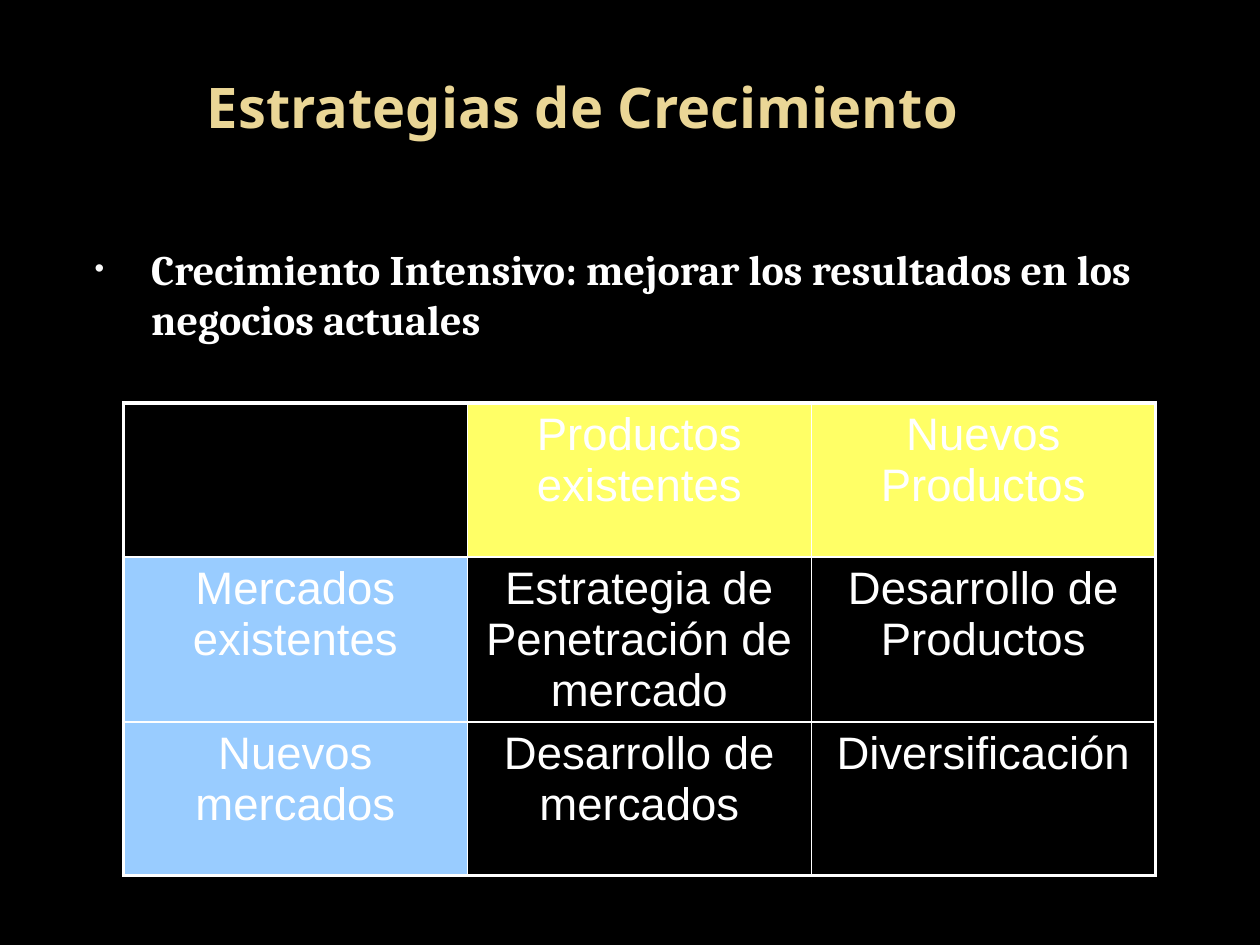
from lxml import etree
from pptx import Presentation
from pptx.dml.color import RGBColor
from pptx.enum.text import MSO_ANCHOR, MSO_AUTO_SIZE, PP_ALIGN
from pptx.oxml.ns import qn
from pptx.util import Inches, Pt

CENTER = PP_ALIGN.CENTER
MIDDLE = MSO_ANCHOR.MIDDLE
FIXED = MSO_AUTO_SIZE.NONE

BLACK, WHITE, GOLD = "000000", "FFFFFF", "EAD696"
YELLOW, BLUE, PALE = "FFFF66", "99CCFF", "F9F9F9"
THIN, THICK = 1, 2.25

GRID = [
    ["", "Productos existentes", "Nuevos Productos"],
    ["Mercados existentes", "Estrategia de Penetración de mercado",
     "Desarrollo de Productos"],
    ["Nuevos mercados", "Desarrollo de mercados", "Diversificación"],
]


def color(code):
    return RGBColor.from_string(code)


def add_tag(parent, tag, **attrs):
    node = etree.SubElement(parent, qn(tag))
    for key, value in attrs.items():
        node.set(key, str(value))
    return node


class Deck:
    """Holds the text style and the current slide."""

    def __init__(self, slide):
        self.slide = slide
        self.fonts = {"title": ("Noto Sans", 32, GOLD, True),
                      "body": ("Cambria", 24, WHITE, True),
                      "cell": ("Arial", 26, WHITE, False)}
        fill = slide.background.fill
        fill.solid()
        fill.fore_color.rgb = color(BLACK)

    def add_text(self, para, text, style):
        run = para.add_run()
        run.text = text
        font = run.font
        font.name, size, code, font.bold = self.fonts[style]
        font.size = Pt(size)
        font.color.rgb = color(code)

    def place(self, shape, left, top, width, height):
        shape.left, shape.top = Inches(left), Inches(top)
        shape.width, shape.height = Inches(width), Inches(height)
        shape.text_frame.auto_size = FIXED
        return shape.text_frame

    def title(self, text, *box):
        frame = self.place(self.slide.shapes.title, *box)
        frame.vertical_anchor = MIDDLE
        para = frame.paragraphs[0]
        para.alignment = CENTER
        self.add_text(para, text, "title")

    def bullet(self, text, *box):
        para = self.place(self.slide.placeholders[1], *box).paragraphs[0]
        props = para._p.get_or_add_pPr()
        props.set("marL", str(Inches(0.6)))
        props.set("indent", str(Inches(-0.45)))
        add_tag(add_tag(props, "a:buClr"), "a:srgbClr", val=PALE)
        add_tag(props, "a:buSzPct", val=65000)
        add_tag(props, "a:buChar", char="•")
        self.add_text(para, text, "body")

    def border(self, cell, side, width):
        line = add_tag(cell._tc.get_or_add_tcPr(), "a:ln" + side, w=Pt(width))
        add_tag(add_tag(line, "a:solidFill"), "a:srgbClr", val=WHITE)

    def table(self, grid, left, top, wide, high):
        """Draws a grid with a thick frame; wide and high are per cell."""
        rows, cols = len(grid), len(grid[0])
        table = self.slide.shapes.add_table(
            rows, cols, Inches(left), Inches(top),
            Inches(wide * cols), Inches(high * rows)).table
        table.first_row = table.horz_banding = False
        for col in table.columns:
            col.width = Inches(wide)
        for r, texts in enumerate(grid):
            table.rows[r].height = Inches(high)
            for c, text in enumerate(texts):
                cell = table.cell(r, c)
                outer = {"L": c == 0, "R": c == cols - 1,
                         "T": r == 0, "B": r == rows - 1}
                for side, edge in outer.items():
                    self.border(cell, side, THICK if edge else THIN)
                head = YELLOW if r == 0 else BLUE
                cell.fill.solid()
                cell.fill.fore_color.rgb = color(
                    head if text and 0 in (r, c) else BLACK)
                if text:
                    para = cell.text_frame.paragraphs[0]
                    para.alignment = CENTER
                    self.add_text(para, text, "cell")


def main():
    prs = Presentation()
    prs.slide_width, prs.slide_height = Inches(10), Inches(7.5)
    deck = Deck(prs.slides.add_slide(prs.slide_layouts[1]))
    deck.title("Estrategias de Crecimiento", 0.5, 0.13, 8.25, 1.42)
    deck.bullet("Crecimiento Intensivo: mejorar los resultados en los "
                "negocios actuales", 0.5, 1.88, 8.91, 4.82)
    deck.table(GRID, 0.98, 3.2, 2.73, 1.22)
    prs.save("out.pptx")


if __name__ == "__main__":
    main()
